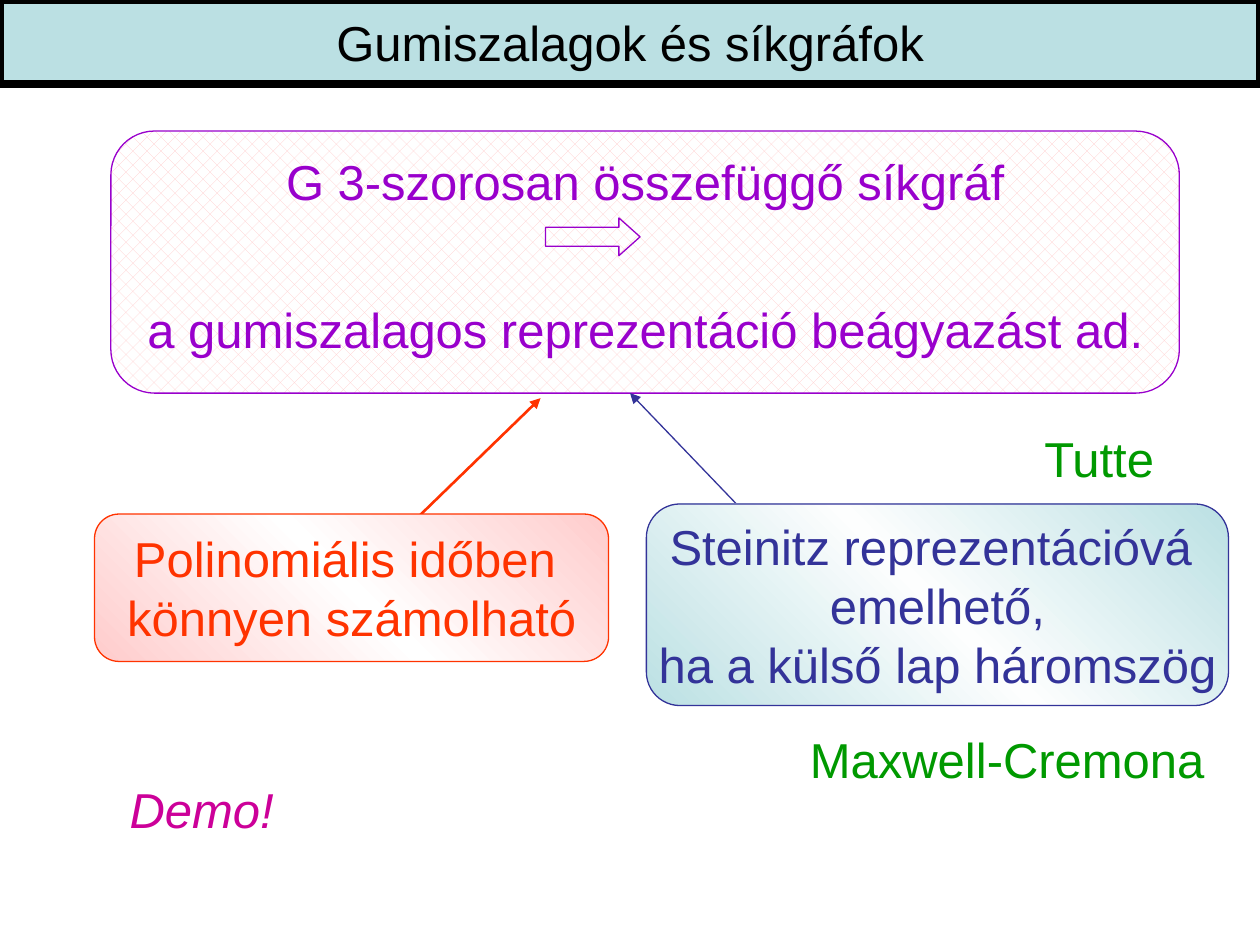
import copy

import pptx
import pptx.dml.color
import pptx.enum.dml
import pptx.enum.shapes
import pptx.enum.text
import pptx.oxml.ns
import pptx.util
from lxml import etree
from pptx.dml.color import RGBColor
from pptx.util import Inches

BLACK = RGBColor(0x00, 0x00, 0x00)
WHITE = RGBColor(0xFF, 0xFF, 0xFF)
OFF_WHITE = RGBColor(0xFD, 0xFE, 0xFE)
TEAL = RGBColor(0xBB, 0xE0, 0xE3)
PINK = RGBColor(0xFF, 0xCC, 0xCC)
PURPLE = RGBColor(0x99, 0x00, 0xCC)
RED = RGBColor(0xFF, 0x33, 0x00)
NAVY = RGBColor(0x33, 0x33, 0x99)
GREEN = RGBColor(0x00, 0x99, 0x00)
MAGENTA = RGBColor(0xCC, 0x00, 0x99)

SHAPES = pptx.enum.shapes.MSO_SHAPE
ALIGN = pptx.enum.text.PP_ALIGN
ANCHOR = pptx.enum.text.MSO_ANCHOR
AUTO_SIZE = pptx.enum.text.MSO_AUTO_SIZE


def write_text(frame, lines, color, align=ALIGN.CENTER, wrap=False, italic=False,
               spacing=None, gap=0, auto_size=AUTO_SIZE.NONE):
    frame.word_wrap = wrap
    frame.auto_size = auto_size
    for index, line in enumerate(lines):
        para = frame.add_paragraph() if index else frame.paragraphs[0]
        para.alignment = align
        para.line_spacing = spacing
        para.space_before = pptx.util.Pt(gap if index else 0)
        span = para.add_run()
        span.text = line
        span.font.name = "Arial"
        span.font.size = pptx.util.Pt(28)
        span.font.italic = italic
        span.font.color.rgb = color


def set_line(shape, color, width):
    shape.line.color.rgb = color
    shape.line.width = pptx.util.Pt(width)


def add_title(page, text):
    title = page.shapes.title
    title.left, title.top = Inches(0), Inches(0)
    title.width, title.height = Inches(10), Inches(0.67)
    title.fill.solid()
    title.fill.fore_color.rgb = TEAL
    set_line(title, BLACK, 4.5)
    title.text_frame.vertical_anchor = ANCHOR.MIDDLE
    write_text(title.text_frame, [text], BLACK, wrap=True)


def add_outlined(page, kind, left, top, width, height, color):
    shape = page.shapes.add_shape(
        kind, Inches(left), Inches(top), Inches(width), Inches(height))
    shape.shadow.inherit = False
    shape.fill.background()
    set_line(shape, color, 0.75)
    return shape


def add_rounded(page, left, top, width, height, lines, color, **text_format):
    box = add_outlined(page, SHAPES.ROUNDED_RECTANGLE, left, top, width, height, color)
    box.text_frame.vertical_anchor = ANCHOR.MIDDLE
    write_text(box.text_frame, lines, color, **text_format)
    return box


def fill_pattern(box, front, back):
    box.fill.patterned()
    box.fill.pattern = pptx.enum.dml.MSO_PATTERN.PERCENT_25
    box.fill.fore_color.rgb = front
    box.fill.back_color.rgb = back


def fill_gradient(box, edge, middle):
    box.fill.gradient()
    box.fill.gradient_angle = 45
    stops = box._element.spPr.find(".//" + pptx.oxml.ns.qn("a:gsLst"))
    stops.insert(1, copy.deepcopy(stops[0]))
    colors = (edge, middle, edge)
    for index, stop in enumerate(box.fill.gradient_stops):
        stop.position = index / 2
        stop.color.rgb = colors[index]


def add_label(page, left, top, width, text, color, **text_format):
    box = page.shapes.add_textbox(
        Inches(left), Inches(top), Inches(width), Inches(0.57))
    write_text(box.text_frame, [text], color, align=ALIGN.LEFT,
               auto_size=AUTO_SIZE.SHAPE_TO_FIT_TEXT, **text_format)


def add_arrow(page, start, end, color, width):
    arrow = page.shapes.add_connector(
        pptx.enum.shapes.MSO_CONNECTOR.STRAIGHT,
        *(Inches(value) for value in start + end))
    set_line(arrow, color, width)
    head = etree.SubElement(arrow.line._get_or_add_ln(), pptx.oxml.ns.qn("a:tailEnd"))
    head.set("type", "triangle")
    etree.SubElement(arrow._element.spPr, pptx.oxml.ns.qn("a:effectLst"))


def main():
    deck = pptx.Presentation()
    deck.slide_width, deck.slide_height = Inches(10), Inches(7.5)
    page = deck.slides.add_slide(deck.slide_layouts[5])
    add_title(page, "Gumiszalagok és síkgráfok")

    theorem = add_rounded(
        page, 0.88, 1.04, 8.48, 2.08,
        ["G 3-szorosan összefüggő síkgráf",
         "a gumiszalagos reprezentáció beágyazást ad."],
        PURPLE, spacing=0.7, gap=61)
    fill_pattern(theorem, PINK, WHITE)
    implication = add_outlined(page, SHAPES.RIGHT_ARROW, 4.33, 1.73, 0.75, 0.3, PURPLE)
    implication.adjustments[1] = 0.56
    add_label(page, 8.19, 3.35, 1.08, "Tutte", GREEN)

    add_arrow(page, (3.25, 4.17), (4.29, 3.16), RED, 1.5)
    runtime = add_rounded(
        page, 0.75, 4.08, 4.08, 1.17,
        ["Polinomiális időben ", "könnyen számolható"], RED)
    fill_gradient(runtime, PINK, WHITE)

    add_arrow(page, (5.97, 4.13), (5, 3.12), NAVY, 0.75)
    lifting = add_rounded(
        page, 5.13, 4, 4.62, 1.6,
        ["Steinitz reprezentációvá ", "emelhető,", "ha a külső lap háromszög"], NAVY)
    fill_gradient(lifting, TEAL, OFF_WHITE)
    add_label(page, 6.33, 5.74, 3.38, "Maxwell-Cremona", GREEN)
    add_label(page, 0.93, 6.14, 1.36, "Demo!", MAGENTA, italic=True)

    deck.save("out.pptx")


if __name__ == "__main__":
    main()
